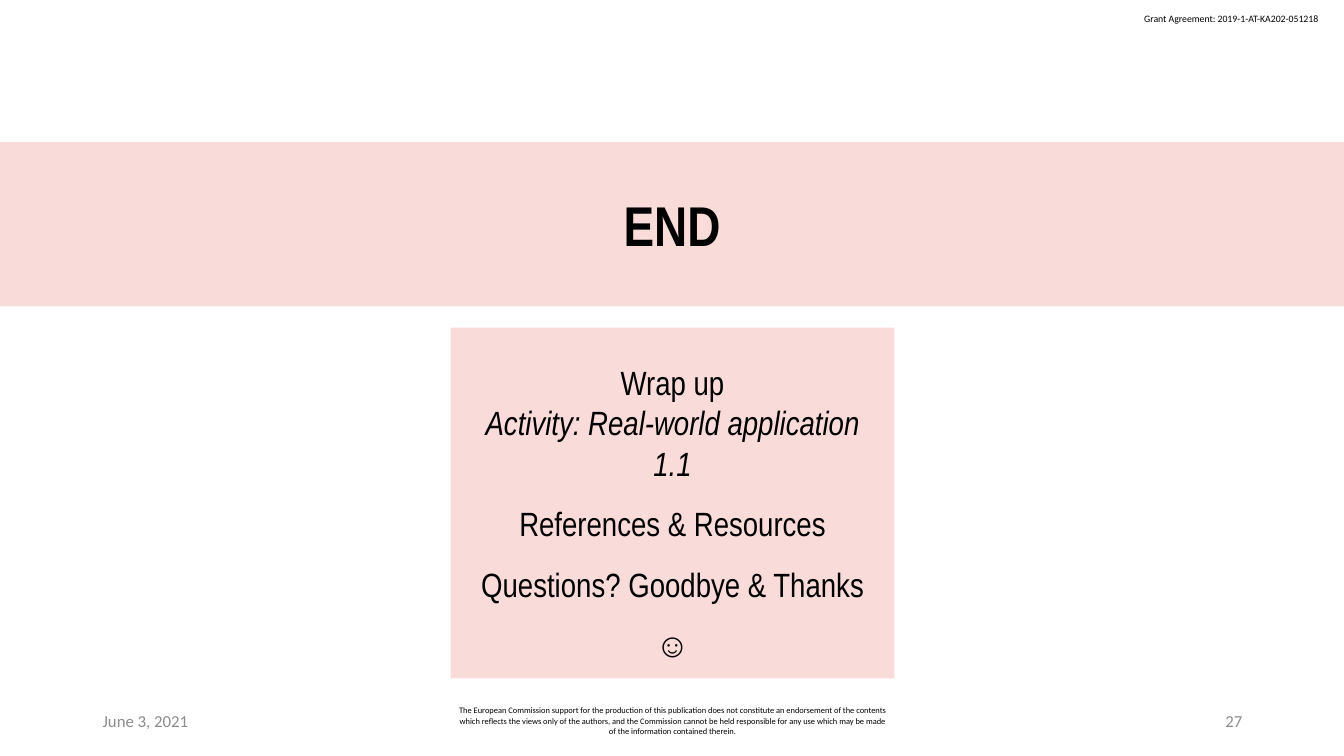
from pptx import Presentation
from pptx.dml.color import RGBColor
from pptx.enum.shapes import MSO_SHAPE
from pptx.enum.text import MSO_ANCHOR, PP_ALIGN
from pptx.util import Inches, Pt

RECT = MSO_SHAPE.RECTANGLE
TOP, MIDDLE = MSO_ANCHOR.TOP, MSO_ANCHOR.MIDDLE
LEFT, CENTER, RIGHT = PP_ALIGN.LEFT, PP_ALIGN.CENTER, PP_ALIGN.RIGHT
COLORS = {"ink": "000000", "muted": "8C8C8C", "panel": "F9DBD9"}
WIDTH, HEIGHT = 13.33, 7.5
GRANT = "Grant Agreement: 2019-1-AT-KA202-051218"
NOTICE = (
    "The European Commission support for the production of this publication "
    "does not constitute an endorsement of the contents which reflects the "
    "views only of the authors, and the Commission cannot be held responsible "
    "for any use which may be made of the information contained therein."
)
CLOSING = [
    ("Wrap up", 1.5, False),
    ("Activity: Real-world application 1.1", 1, True),
    ("References & Resources", 1.5, False),
    ("Questions? Goodbye & Thanks ☺", 1.5, False),
]


def style(para, size, face, color="ink", align=CENTER, bold=False, italic=False):
    """Format one paragraph and its runs."""
    para.alignment = align
    for run in para.runs:
        font = run.font
        font.size, font.name = Pt(size), face
        font.bold, font.italic = bold, italic
        font.color.rgb = RGBColor.from_string(COLORS[color])


def label(slide, box, text, size, color="ink", align=LEFT, anchor=MIDDLE, wrap=True):
    """Place a small text box."""
    frame = slide.shapes.add_textbox(*map(Inches, box)).text_frame
    frame.word_wrap = wrap
    frame.vertical_anchor = anchor
    frame.text = text
    style(frame.paragraphs[0], size, "Calibri", color, align)


def panel(slide, box):
    """Place a tinted rectangle and return its text frame."""
    shape = slide.shapes.add_shape(RECT, *map(Inches, box))
    shape.shadow.inherit = False
    shape.fill.solid()
    shape.fill.fore_color.rgb = RGBColor.from_string(COLORS["panel"])
    shape.line.fill.background()
    frame = shape.text_frame
    frame.word_wrap = True
    frame.vertical_anchor = MIDDLE
    frame.margin_left = frame.margin_right = Inches(0.13)
    frame.margin_top = frame.margin_bottom = Inches(0.07)
    return frame


def banner(slide, box):
    """Place the title band."""
    frame = panel(slide, box)
    frame.text = "END"
    style(frame.paragraphs[0], 40, "Arial Narrow", bold=True)


def agenda(slide, box):
    """Place the panel of closing items."""
    frame = panel(slide, box)
    frame.text = "\n".join(text for text, _, _ in CLOSING)
    for para, (_, space, italic) in zip(frame.paragraphs, CLOSING):
        para.line_spacing = float(space)
        style(para, 24, "Arial Narrow", italic=italic)


def footer(slide, box):
    """Place the date, notice and page number along the bottom."""
    left, top, width, height = box
    side, mid = 3, 4.5
    label(slide, (left, top, side, height), "June 3, 2021", 12, "muted")
    center = left + (width - mid) / 2
    label(slide, (center, top, mid, height), NOTICE, 6, align=CENTER)
    end = left + width - side
    label(slide, (end, top, side, height), "27", 12, "muted", RIGHT)


def main():
    """Build and save the closing slide."""
    deck = Presentation()
    deck.slide_width, deck.slide_height = Inches(WIDTH), Inches(HEIGHT)
    slide = deck.slides.add_slide(deck.slide_layouts[6])
    label(slide, (11.25, 0.08, 1.97, 0.22), GRANT, 7, anchor=TOP, wrap=False)
    footer(slide, (0.92, 6.95, 11.5, 0.4))
    banner(slide, (0, 1.41, WIDTH, 1.63))
    agenda(slide, (4.47, 3.25, 4.4, 3.48))
    deck.save("out.pptx")


if __name__ == "__main__":
    main()
